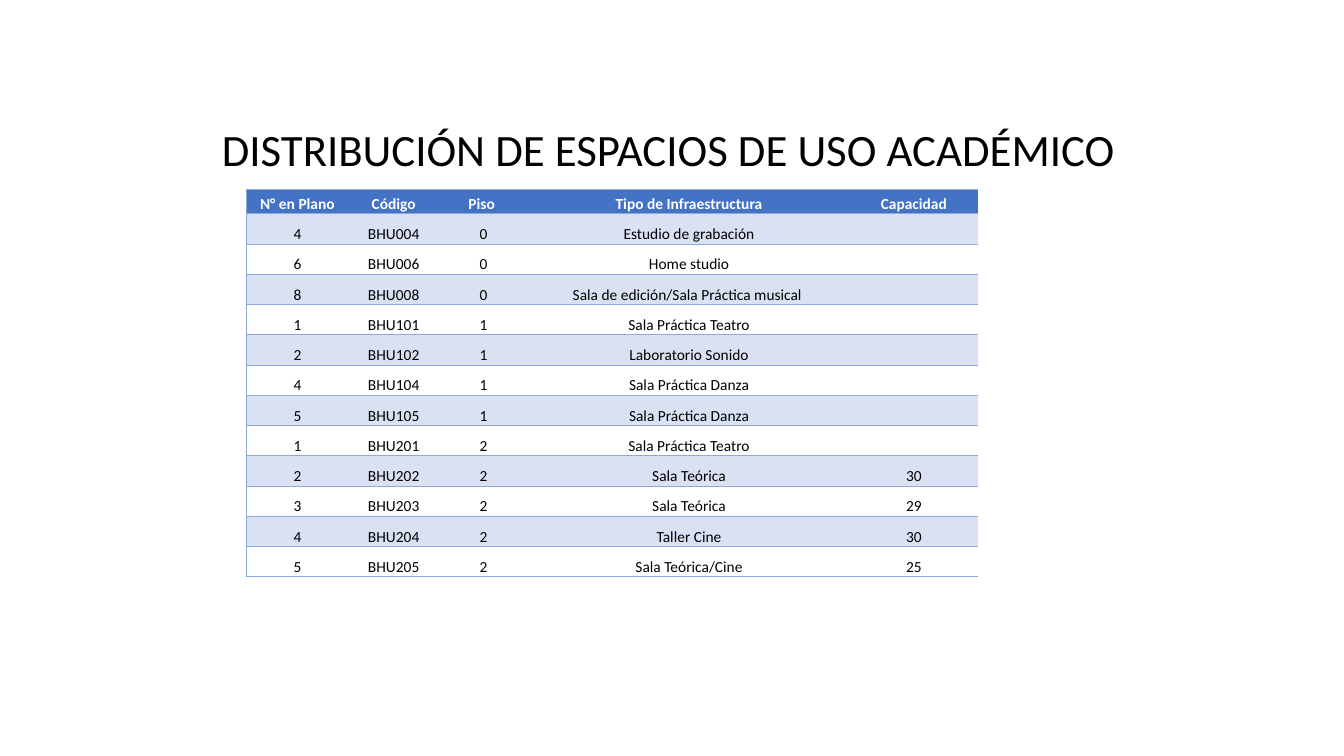
from lxml import etree
from pptx import Presentation
from pptx.dml.color import RGBColor
from pptx.enum import text
from pptx.oxml import ns
from pptx.util import Inches, Pt

TITLE = "DISTRIBUCIÓN DE ESPACIOS DE USO ACADÉMICO"
HEAD = ("N° en Plano", "Código", "Piso ", "Tipo de Infraestructura", "Capacidad")
ROOMS = [
    ("4", "BHU004", "0", "Estudio de grabación", ""),
    ("6", "BHU006", "0", "Home studio", ""),
    ("8", "BHU008", "0", "Sala de edición/Sala Práctica musical ", ""),
    ("1", "BHU101", "1", "Sala Práctica Teatro", ""),
    ("2", "BHU102", "1", "Laboratorio Sonido", ""),
    ("4", "BHU104", "1", "Sala Práctica Danza", ""),
    ("5", "BHU105", "1", "Sala Práctica Danza", ""),
    ("1", "BHU201", "2", "Sala Práctica Teatro", ""),
    ("2", "BHU202", "2", "Sala Teórica", "30"),
    ("3", "BHU203", "2", "Sala Teórica", "29"),
    ("4", "BHU204", "2", "Taller Cine", "30"),
    ("5", "BHU205", "2", "Sala Teórica/Cine", "25"),
]
WIDTHS = (1.02, 0.89, 0.89, 3.19, 1.27)
HEAD_H, ROOM_H = 0.24, 0.3
FONT = "Calibri"
BLACK = RGBColor(0x00, 0x00, 0x00)
WHITE = RGBColor(0xFF, 0xFF, 0xFF)
BLUE = RGBColor(0x44, 0x72, 0xC4)
BAND = RGBColor(0xD9, 0xE1, 0xF2)
RULE = RGBColor(0x8E, 0xA9, 0xDB)


def style(para, size, color, bold=False):
    """Set the font of a paragraph."""
    font = para.font
    font.name, font.size, font.bold = FONT, Pt(size), bold
    font.color.rgb = color


def border(cell, sides):
    """Rule the named sides of a cell and clear the others."""
    props = cell._tc.get_or_add_tcPr()
    for side in "LRTB":
        line = etree.SubElement(props, ns.qn(f"a:ln{side}"), w=str(Pt(0.5)))
        if side in sides:
            fill = etree.SubElement(line, ns.qn("a:solidFill"))
            etree.SubElement(fill, ns.qn("a:srgbClr"), val=str(RULE))
        else:
            etree.SubElement(line, ns.qn("a:noFill"))


def add_title(slide):
    """Place the heading."""
    title = slide.shapes.title
    title.left, title.top = Inches(2.1), Inches(1.12)
    title.width, title.height = Inches(9.13), Inches(0.65)
    frame = title.text_frame
    frame.text = TITLE
    frame.word_wrap = True
    frame.auto_size = text.MSO_AUTO_SIZE.SHAPE_TO_FIT_TEXT
    frame.vertical_anchor = text.MSO_ANCHOR.TOP
    para = frame.paragraphs[0]
    para.alignment = text.PP_ALIGN.LEFT
    para.line_spacing = 1.07
    para.space_before, para.space_after = Pt(0), Pt(8)
    style(para, 32, BLACK)


def fill_cell(cell, words, row, col):
    """Write and format one cell."""
    cell.text = words
    cell.vertical_anchor = text.MSO_ANCHOR.BOTTOM
    cell.margin_left = cell.margin_right = cell.margin_top = Inches(0.01)
    cell.margin_bottom = 0
    border(cell, "TB" if col else "LTB")
    if row % 2 or row == 0:
        cell.fill.solid()
        cell.fill.fore_color.rgb = BAND if row else BLUE
    else:
        cell.fill.background()
    para = cell.text_frame.paragraphs[0]
    para.alignment = text.PP_ALIGN.CENTER
    style(para, 11, BLACK if row else WHITE, row == 0)


def add_rooms(slide):
    """Place the table of rooms."""
    rows = [HEAD, *ROOMS]
    high = HEAD_H + ROOM_H * len(ROOMS)
    table = slide.shapes.add_table(
        len(rows), len(HEAD), Inches(2.44), Inches(1.88),
        Inches(sum(WIDTHS)), Inches(high)).table
    table.first_row = table.horz_banding = False
    for col, width in zip(table.columns, WIDTHS):
        col.width = Inches(width)
    for r, row in enumerate(rows):
        table.rows[r].height = Inches(ROOM_H if r else HEAD_H)
        for c, words in enumerate(row):
            fill_cell(table.cell(r, c), words, r, c)


def main():
    """Build the slide and save it."""
    deck = Presentation()
    deck.slide_width, deck.slide_height = Inches(13.33), Inches(7.5)
    slide = deck.slides.add_slide(deck.slide_layouts[5])
    add_title(slide)
    add_rooms(slide)
    deck.save("out.pptx")


if __name__ == "__main__":
    main()
